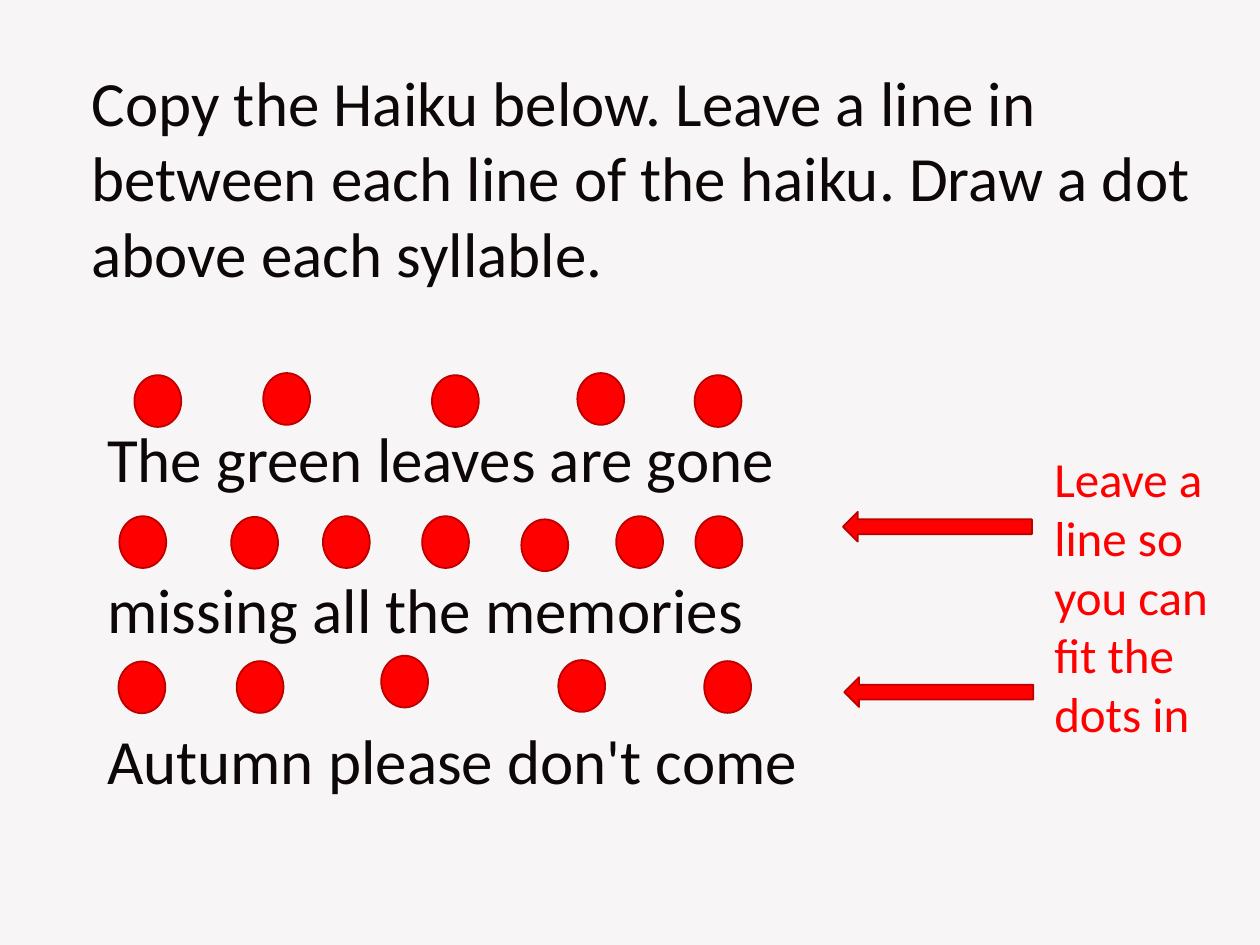
from dataclasses import dataclass

from lxml.etree import SubElement
from pptx import Presentation
from pptx.dml.color import RGBColor
from pptx.enum.shapes import MSO_SHAPE
from pptx.enum.text import MSO_ANCHOR, MSO_AUTO_SIZE, PP_ALIGN
from pptx.oxml.ns import qn
from pptx.util import Pt

PAPER = RGBColor(0xF7, 0xF5, 0xF6)
INK = RGBColor(0x0D, 0x07, 0x07)
RED = RGBColor(0xFE, 0x00, 0x00)
EDGE = RGBColor(0xBC, 0x00, 0x00)
NOTE = RGBColor(0xFF, 0x00, 0x00)
FONT = "Calibri"


@dataclass
class Box:
    left: float
    top: float
    width: float
    height: float


@dataclass
class Verse:
    text: str
    dots: list[tuple[float, float]]


TITLE = ("Copy the Haiku below. Leave a line in between each line of the haiku. "
         "Draw a dot above each syllable.")
HAIKU = [
    Verse("The green leaves are gone",
          [(76.8, 214.4), (150.4, 213.2), (246.8, 214.4), (329.9, 213.2), (396.9, 214.4)]),
    Verse("missing all the memories",
          [(68.2, 295), (132.1, 295.4), (184.5, 295), (241.2, 295), (297.9, 296.8),
           (352.1, 295), (397.4, 295)]),
    Verse("Autumn please don't come",
          [(67.7, 378), (135.2, 377.8), (217.8, 374.7), (319, 377.2), (402.4, 377.8)]),
]
ARROWS = [Box(481.7, 292.5, 108, 17), Box(482.4, 387, 108, 17)]


def place(shape, box: Box) -> None:
    shape.left, shape.top = Pt(box.left), Pt(box.top)
    shape.width, shape.height = Pt(box.width), Pt(box.height)


def write(shape, lines: list[str], size: float, color: RGBColor, gap: float = 0) -> None:
    frame = shape.text_frame
    frame.text = "\n".join(lines)
    frame.word_wrap = True
    frame.auto_size = MSO_AUTO_SIZE.NONE
    frame.vertical_anchor = MSO_ANCHOR.TOP
    for index, para in enumerate(frame.paragraphs):
        para.alignment = PP_ALIGN.LEFT
        para.space_before = Pt(gap if index else 0)
        para.font.name = FONT
        para.font.size = Pt(size)
        para.font.color.rgb = color


def clear_bullets(shape) -> None:
    for para in shape.text_frame.paragraphs:
        props = para._p.get_or_add_pPr()
        props.set("marL", "0")
        props.set("indent", "0")
        SubElement(props, qn("a:buNone"))


def draw(slide, kind: MSO_SHAPE, box: Box) -> None:
    shape = slide.shapes.add_shape(
        kind, Pt(box.left), Pt(box.top), Pt(box.width), Pt(box.height))
    shape.shadow.inherit = False
    shape.fill.solid()
    shape.fill.fore_color.rgb = RED
    shape.line.color.rgb = EDGE
    shape.line.width = Pt(1)


def main() -> None:
    deck = Presentation()
    deck.slide_width, deck.slide_height = Pt(720), Pt(540)
    slide = deck.slides.add_slide(deck.slide_layouts[1])
    slide.background.fill.solid()
    slide.background.fill.fore_color.rgb = PAPER

    title, body = slide.placeholders
    place(title, Box(45.2, 32.4, 646.6, 138.2))
    write(title, [TITLE], 36, INK)
    place(body, Box(54, 236.2, 629.3, 225.4))
    write(body, [verse.text for verse in HAIKU], 36, INK, gap=43)
    clear_bullets(body)

    for arrow in ARROWS:
        draw(slide, MSO_SHAPE.LEFT_ARROW, arrow)
    note = slide.shapes.add_textbox(Pt(595.4), Pt(252.7), Pt(124.6), Pt(177.1))
    write(note, ["Leave a line so you can fit the dots in"], 28, NOTE)
    for verse in HAIKU:
        for left, top in verse.dots:
            draw(slide, MSO_SHAPE.OVAL, Box(left, top, 26.8, 29.6))
    deck.save("out.pptx")


if __name__ == "__main__":
    main()
